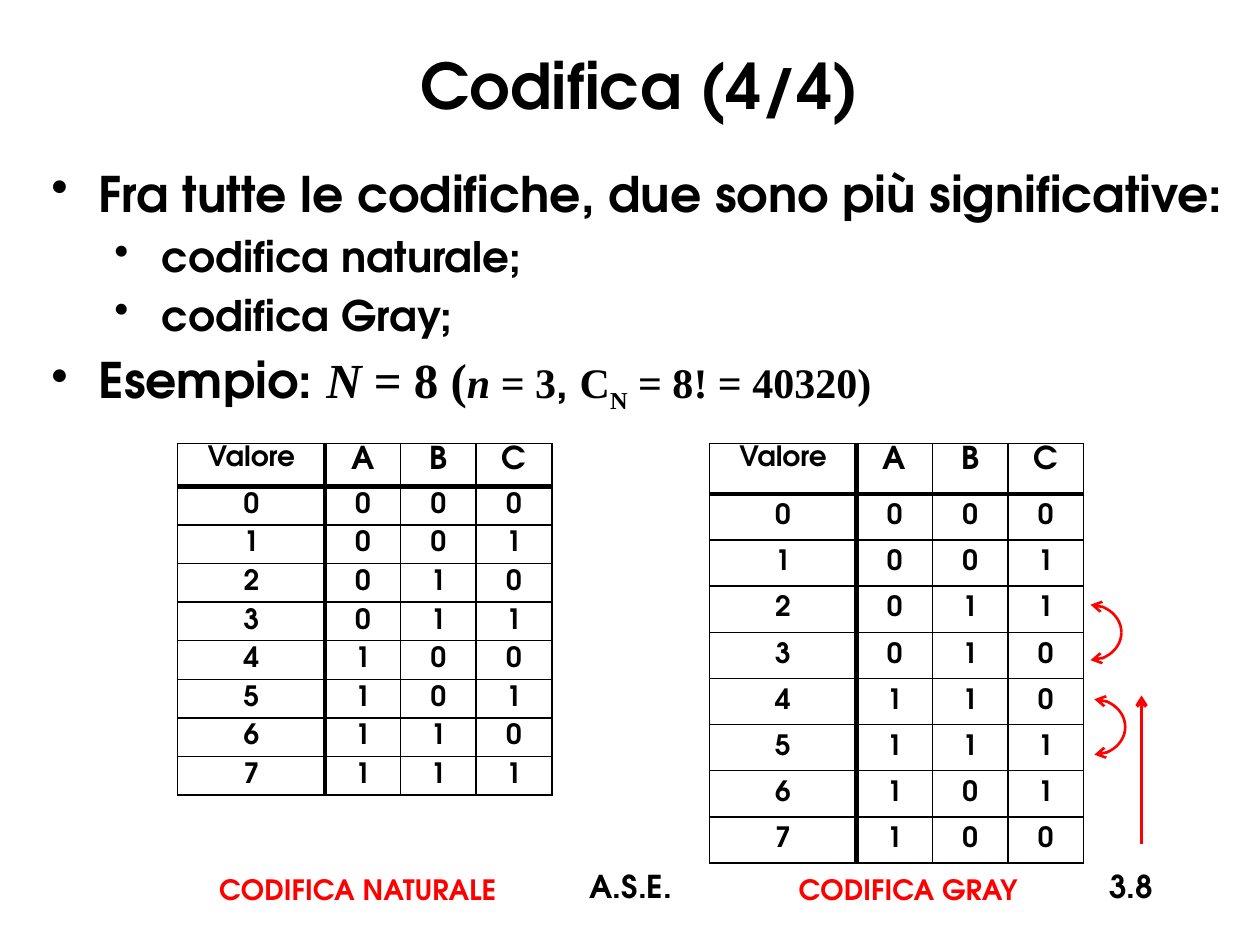
from dataclasses import dataclass
from typing import Callable, NamedTuple

from lxml import etree
from pptx import Presentation
from pptx.dml.color import RGBColor
from pptx.enum.shapes import MSO_CONNECTOR, MSO_SHAPE
from pptx.enum.text import MSO_ANCHOR, PP_ALIGN
from pptx.oxml.ns import qn
from pptx.util import Emu, Inches, Pt

LEFT, CENTER, RIGHT = PP_ALIGN.LEFT, PP_ALIGN.CENTER, PP_ALIGN.RIGHT
TOP, MIDDLE = MSO_ANCHOR.TOP, MSO_ANCHOR.MIDDLE
ARC, STRAIGHT = MSO_SHAPE.ARC, MSO_CONNECTOR.STRAIGHT

# The slide is a grid of 100 columns by 75 rows of square cells
SLIDE_WIDTH, SLIDE_HEIGHT = Inches(10), Inches(7.5)
CELL = SLIDE_WIDTH // 100


@dataclass(frozen=True)
class Theme:
    font: str = "TeX Gyre Adventor"
    math_font: str = "Times New Roman"
    ink: str = "000000"
    accent: str = "FF0000"
    title: int = 36
    body: int = 28
    sub: int = 24
    head: int = 18
    small: int = 16
    thin: float = 1
    thick: float = 3


THEME = Theme()


class Box(NamedTuple):
    column: float
    row: float
    columns: float
    rows: float


class Label(NamedTuple):
    text: str
    box: Box
    size: int
    color: str = THEME.ink
    align: PP_ALIGN = LEFT
    anchor: MSO_ANCHOR = TOP
    wrap: bool = True


class Piece(NamedTuple):
    text: str
    size: int = THEME.body
    font: str = THEME.font
    italic: bool = False
    subscript: bool = False


class Bullet(NamedTuple):
    level: int
    size: int
    pieces: list[Piece]


class CodeTable(NamedTuple):
    column: float
    head_rows: float
    total_rows: float
    encode: Callable[[int], int]


def grid(cells: float) -> Emu:
    return Emu(round(cells * CELL))


def place(box: Box) -> list[Emu]:
    return [grid(value) for value in box]


def style(font, size: int, color: str = THEME.ink, name: str = THEME.font) -> None:
    font.name, font.size, font.bold = name, Pt(size), True
    font.color.rgb = RGBColor.from_string(color)


def add_label(slide, label: Label) -> None:
    frame = slide.shapes.add_textbox(*place(label.box)).text_frame
    frame.word_wrap, frame.vertical_anchor = label.wrap, label.anchor
    paragraph = frame.paragraphs[0]
    paragraph.text, paragraph.alignment = label.text, label.align
    style(paragraph.font, label.size, label.color)


def add_bullets(slide, box: Box, bullets: list[Bullet]) -> None:
    frame = slide.shapes.add_textbox(*place(box)).text_frame
    frame.word_wrap = True
    for index, bullet in enumerate(bullets):
        paragraph = frame.add_paragraph() if index else frame.paragraphs[0]
        paragraph.level = bullet.level
        paragraph.space_before = Pt(bullet.size * 0.2)
        properties = paragraph._p.get_or_add_pPr()
        properties.set("marL", str(grid(3.75 + 5 * bullet.level)))
        properties.set("indent", str(-grid(3.75)))
        etree.SubElement(properties, qn("a:buChar"), char="•")
        for piece in bullet.pieces:
            run = paragraph.add_run()
            run.text = piece.text
            style(run.font, piece.size, name=piece.font)
            run.font.italic = piece.italic
            if piece.subscript:
                run.font._element.set("baseline", "-25000")


def set_border(cell, side: str, width: float) -> None:
    line = etree.SubElement(cell._tc.get_or_add_tcPr(), qn(f"a:ln{side}"), w=str(Pt(width)))
    fill = etree.SubElement(line, qn("a:solidFill"))
    etree.SubElement(fill, qn("a:srgbClr"), val=THEME.ink)


def add_code_table(slide, code: CodeTable) -> None:
    values = [["Valore", "A", "B", "C"]]
    values += [[str(number), *f"{code.encode(number):03b}"] for number in range(8)]
    box = Box(code.column, 35.2, 29.7, code.total_rows)
    table = slide.shapes.add_table(len(values), 4, *place(box)).table
    table.first_row = table.horz_banding = False
    for column, width in zip(table.columns, (11.7, 6, 6, 6)):
        column.width = grid(width)
    for r, texts in enumerate(values):
        table.rows[r].height = grid((code.total_rows - code.head_rows) / 8 if r else code.head_rows)
        for c, text in enumerate(texts):
            cell = table.cell(r, c)
            cell.margin_top = cell.margin_bottom = grid(0.2)
            cell.vertical_anchor = MIDDLE if r else TOP
            paragraph = cell.text_frame.paragraphs[0]
            paragraph.text, paragraph.alignment = text, CENTER
            style(paragraph.font, THEME.head if r == 0 and c else THEME.small)
            # Thick rules set off the header row and the value column
            heavy_sides = {"L": c == 1, "R": c == 0, "T": r == 1, "B": r == 0}
            for side, heavy in heavy_sides.items():
                set_border(cell, side, THEME.thick if heavy else THEME.thin)
            cell.fill.background()


def style_arrow(shape, width: float, end: str) -> None:
    shape.line.color.rgb = RGBColor.from_string(THEME.accent)
    shape.line.width = Pt(width)
    etree.SubElement(shape.line._get_or_add_ln(), qn(f"a:{end}End"), type="arrow")


def add_swap_arrow(slide, box: Box) -> None:
    group = slide.shapes.add_group_shape()
    for flipped in (False, True):
        arc = group.shapes.add_shape(ARC, *place(box))
        arc.shadow.inherit = False
        arc.fill.background()
        style_arrow(arc, 1.5, "head")
        if flipped:
            arc._element.spPr.get_or_add_xfrm().set("flipV", "1")


def add_up_arrow(slide, column: float, bottom: float, top: float) -> None:
    arrow = slide.shapes.add_connector(STRAIGHT, *place(Box(column, bottom, column, top)))
    style_arrow(arrow, 2, "tail")
    etree.SubElement(arrow._element.spPr, qn("a:effectLst"))


LABELS = [
    Label("A.S.E.", Box(34.2, 68.3, 31.7, 5), THEME.head, align=CENTER),
    Label("3.8", Box(71.7, 68.3, 20.8, 5), THEME.head, align=RIGHT),
    Label("Codifica (4/4)", Box(3.3, 1.7, 95, 10), THEME.title, align=CENTER, anchor=MIDDLE),
    Label("CODIFICA NATURALE", Box(16.4, 68.8, 25.5, 3.7), THEME.small, THEME.accent, wrap=False),
    Label("CODIFICA GRAY", Box(62.4, 68.8, 19.7, 3.7), THEME.small, THEME.accent, wrap=False),
]
BULLETS = [
    Bullet(0, THEME.body, [Piece("Fra tutte le codifiche, due sono più significative:")]),
    Bullet(1, THEME.sub, [Piece("codifica naturale;", THEME.sub)]),
    Bullet(1, THEME.sub, [Piece("codifica Gray;", THEME.sub)]),
    Bullet(0, THEME.body, [
        Piece("Esempio: "),
        Piece("N ", font=THEME.math_font, italic=True),
        Piece("= 8 (", font=THEME.math_font),
        Piece("n", THEME.sub, THEME.math_font, italic=True),
        Piece(" = 3", THEME.sub, THEME.math_font),
        Piece(", ", THEME.sub),
        Piece("C", THEME.sub, THEME.math_font),
        Piece("N", THEME.sub, THEME.math_font, subscript=True),
        Piece(" = 8! = 40320)", THEME.sub, THEME.math_font),
    ]),
]
CODE_TABLES = [
    CodeTable(14.1, 3.35, 27.8, lambda number: number),
    CodeTable(56.3, 4, 33.3, lambda number: number ^ number >> 1),
]


def main() -> None:
    presentation = Presentation()
    presentation.slide_width, presentation.slide_height = SLIDE_WIDTH, SLIDE_HEIGHT
    slide = presentation.slides.add_slide(presentation.slide_layouts[6])

    # Text
    add_bullets(slide, Box(3.1, 12.5, 96.9, 55.8), BULLETS)
    for label in LABELS:
        add_label(slide, label)

    # Code tables
    for code in CODE_TABLES:
        add_code_table(slide, code)

    # Arrows beside the Gray table
    for column, row in ((84.1, 48), (84.4, 55.5)):
        add_swap_arrow(slide, Box(column, row, 4.9, 4.4))
    add_up_arrow(slide, 90.6, 67, 55.2)

    presentation.save("out.pptx")


if __name__ == "__main__":
    main()
